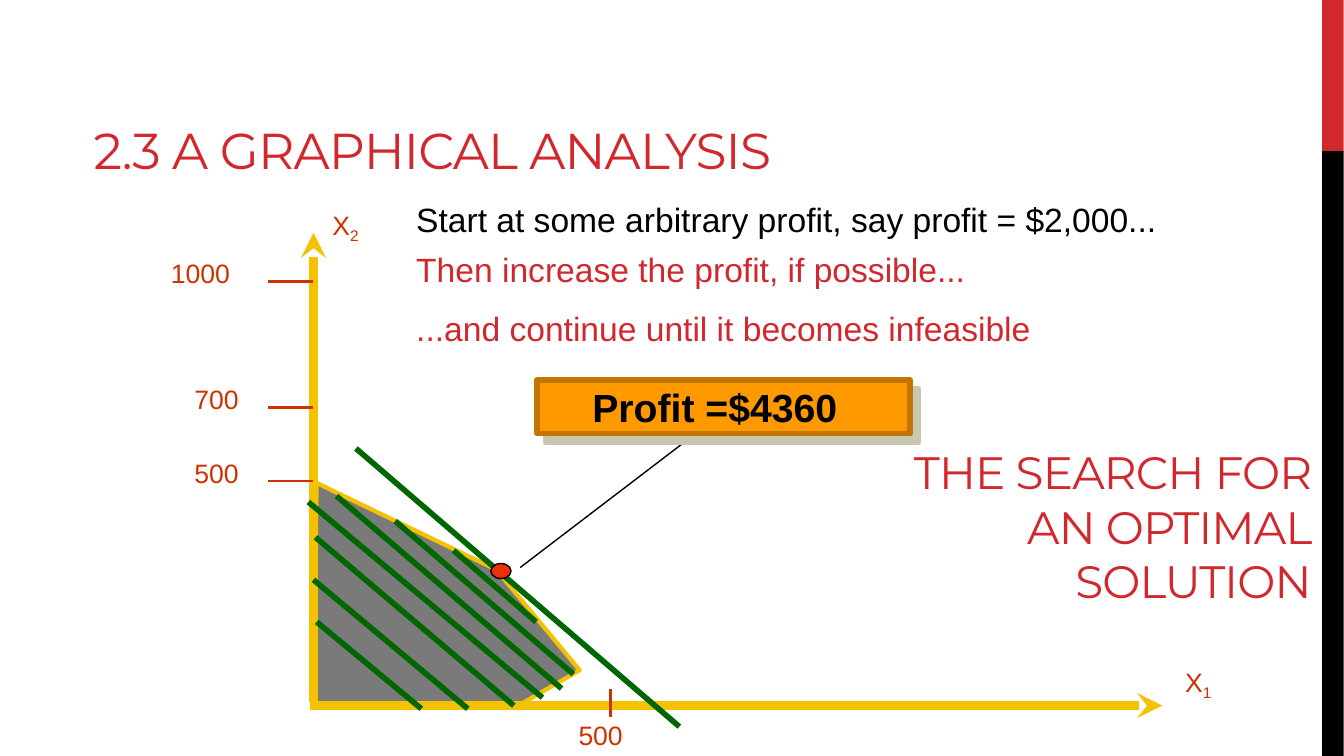
from dataclasses import dataclass

from lxml import etree
from pptx import Presentation
from pptx.dml.color import RGBColor
from pptx.enum.shapes import MSO_CONNECTOR, MSO_SHAPE
from pptx.enum.text import MSO_ANCHOR, MSO_AUTO_SIZE, PP_ALIGN
from pptx.oxml.ns import qn
from pptx.util import Cm, Pt

STRAIGHT = MSO_CONNECTOR.STRAIGHT
RECTANGLE, OVAL = MSO_SHAPE.RECTANGLE, MSO_SHAPE.OVAL
TOP, BOTTOM = MSO_ANCHOR.TOP, MSO_ANCHOR.BOTTOM
LEFT, RIGHT = PP_ALIGN.LEFT, PP_ALIGN.RIGHT
NO_AUTOFIT = MSO_AUTO_SIZE.NONE

COLOURS = {
    "red": "D1282E", "black": "000000", "region": "7A7A7A", "axis": "F5C201",
    "profit": "006600", "label": "CC3300", "optimum": "EF2F09",
    "callout": "FF9900", "callout edge": "C27500", "shadow": "C8C8B1",
}


@dataclass
class Segment:
    start: tuple[float, float]
    end: tuple[float, float]
    colour: str
    width: float
    arrow: str = ""


@dataclass
class Block:
    left: float
    top: float
    width: float
    height: float
    fill: str
    kind: int = RECTANGLE
    edge: str = ""
    edge_width: float = 0


@dataclass
class Label:
    text: str
    left: float
    top: float
    width: float
    height: float = 1.07
    size: float = 19
    colour: str = "label"
    font: str = "Arial"
    bold: bool = False
    wrap: bool = False
    anchor: int = TOP
    align: int = LEFT
    subscript: str = ""
    spacing: int = 0


ORIGIN_X, BASE_Y = 7.9, 17.78
TICK_LEFT = 6.76
FEASIBLE_REGION = [(7.9, 17.68), (7.98, 12.17), (12.5, 14.35), (14.61, 16.89), (13.06, BASE_Y)]
PROFIT_LINES = [
    ((7.98, 15.67), (10.62, 17.86)),
    ((7.9, 14.61), (11.79, 17.86)),
    ((7.95, 13.54), (12.95, 17.78)),
    ((7.77, 12.65), (13.67, 17.58)),
    ((8.48, 12.5), (14.15, 17.35)),
    ((9.96, 13.13), (14.45, 16.99)),
    ((11.43, 13.87), (13.51, 15.67)),
    ((8.97, 11.3), (17.12, 18.31)),
]
AXES = [
    Segment((ORIGIN_X, 5.87), (ORIGIN_X, 17.7), "axis", 6, "headEnd"),
    Segment((7.82, BASE_Y), (29.29, BASE_Y), "axis", 6, "tailEnd"),
]
TICKS = [
    Segment((TICK_LEFT, height), (ORIGIN_X, height), "label", 2)
    for height in (12.12, 7.09, 10.26)
] + [Segment((15.39, 17.37), (15.39, 18.06), "label", 2)]
POINTER = Segment((13.11, 14.3), (17.63, 10.85), "black", 1)
SIDE_BARS = [
    Block(33.32, 0, 0.54, 3.81, "red"),
    Block(33.32, 3.81, 0.54, 15.24, "black"),
]
OPTIMUM = Block(12.37, 14.2, 0.51, 0.38, "optimum", OVAL, "black", 1)
CALLOUT = Block(13.54, 9.58, 9.4, 1.35, "callout", RECTANGLE, "callout edge", 4)
TITLE = Label("THE SEARCH FOR AN OPTIMAL SOLUTION", 22.02, 11.63, 11.28, 3.81, 32.4, "red",
              "Montserrat", wrap=True, anchor=BOTTOM, align=RIGHT, spacing=-60)
LABELS = [
    Label("Start at some arbitrary profit, say profit = $2,000...",
          10.24, 4.88, 19.35, 1.3, 24, "black"),
    Label("Then increase the profit, if possible...", 10.24, 6.15, 14.48, 1.3, 24, "red"),
    Label("...and continue until it becomes infeasible", 10.24, 7.62, 16.15, 1.3, 24, "red"),
    Label("Profit =$4360", 14.68, 9.53, 7.9, 1.45, 28, "black", bold=True, wrap=True),
    Label("500", 4.65, 11.38, 1.65),
    Label("700", 4.65, 9.53, 1.65),
    Label("1000", 4.06, 6.35, 2.03),
    Label("500", 14.33, 17.98, 1.65),
    Label("X", 8.13, 5.13, 1.22, subscript="2"),
    Label("X", 29.62, 16.64, 1.22, subscript="1"),
    Label("2.3 A GRAPHICAL ANALYSIS", 2.11, 0.84, 21.44, 3.81, 36, "red",
          "Montserrat", wrap=True, anchor=BOTTOM, spacing=-60),
]


def rgb(name: str) -> RGBColor:
    return RGBColor.from_string(COLOURS[name])


def format_shape(shape, fill: str, edge: str, edge_width: float) -> None:
    shape.shadow.inherit = False
    shape.fill.solid()
    shape.fill.fore_color.rgb = rgb(fill)
    if edge:
        shape.line.color.rgb = rgb(edge)
        shape.line.width = Pt(edge_width)
    else:
        shape.line.fill.background()


def draw_block(slide, block: Block):
    shape = slide.shapes.add_shape(
        block.kind, Cm(block.left), Cm(block.top), Cm(block.width), Cm(block.height))
    format_shape(shape, block.fill, block.edge, block.edge_width)
    return shape


def cast_shadow(shape) -> None:
    effects = shape._element.spPr.find(qn("a:effectLst"))
    shadow = etree.SubElement(effects, qn("a:outerShdw"), blurRad="0", dist=str(Pt(8.5)),
                              dir="2700000", algn="ctr", rotWithShape="0")
    etree.SubElement(shadow, qn("a:srgbClr"), val=COLOURS["shadow"])


def draw_region(slide) -> None:
    points = [(Cm(x), Cm(y)) for x, y in FEASIBLE_REGION]
    builder = slide.shapes.build_freeform(*points[0])
    builder.add_line_segments(points[1:], close=False)
    format_shape(builder.convert_to_shape(), "region", "axis", 3)


def draw_segment(slide, segment: Segment) -> None:
    ends = [Cm(value) for value in segment.start + segment.end]
    connector = slide.shapes.add_connector(STRAIGHT, *ends)
    connector.line.color.rgb = rgb(segment.colour)
    connector.line.width = Pt(segment.width)
    properties = connector._element.spPr
    if segment.arrow:
        etree.SubElement(properties.find(qn("a:ln")), qn(f"a:{segment.arrow}"), type="stealth")
    etree.SubElement(properties, qn("a:effectLst"))


def write_label(shape, label: Label) -> None:
    for side in ("left", "top", "width", "height"):
        setattr(shape, side, Cm(getattr(label, side)))
    frame = shape.text_frame
    frame_format = {
        "auto_size": NO_AUTOFIT, "word_wrap": label.wrap, "vertical_anchor": label.anchor,
        "margin_left": Cm(0.25), "margin_right": Cm(0.25),
        "margin_top": Cm(0.13), "margin_bottom": Cm(0.13),
    }
    for name, value in frame_format.items():
        setattr(frame, name, value)
    paragraph = frame.paragraphs[0]
    paragraph.alignment = label.align
    font_format = {"name": label.font, "size": Pt(label.size), "bold": label.bold}
    for text in filter(None, (label.text, label.subscript)):
        run = paragraph.add_run()
        run.text = text
        for name, value in font_format.items():
            setattr(run.font, name, value)
        run.font.color.rgb = rgb(label.colour)
        if label.spacing:
            run.font._element.set("spc", str(label.spacing))
    if label.subscript:
        run.font._element.set("baseline", "-25000")


def main() -> None:
    presentation = Presentation()
    presentation.slide_width = Cm(33.87)
    presentation.slide_height = Cm(19.05)
    slide = presentation.slides.add_slide(presentation.slide_layouts[5])
    write_label(slide.shapes.title, TITLE)
    for bar in SIDE_BARS:
        draw_block(slide, bar)
    draw_region(slide)
    profit_segments = [Segment(start, end, "profit", 4) for start, end in PROFIT_LINES]
    for segment in AXES + profit_segments + TICKS:
        draw_segment(slide, segment)
    draw_block(slide, OPTIMUM)
    draw_segment(slide, POINTER)
    cast_shadow(draw_block(slide, CALLOUT))
    for label in LABELS:
        write_label(slide.shapes.add_textbox(0, 0, 0, 0), label)
    presentation.save("out.pptx")


if __name__ == "__main__":
    main()
